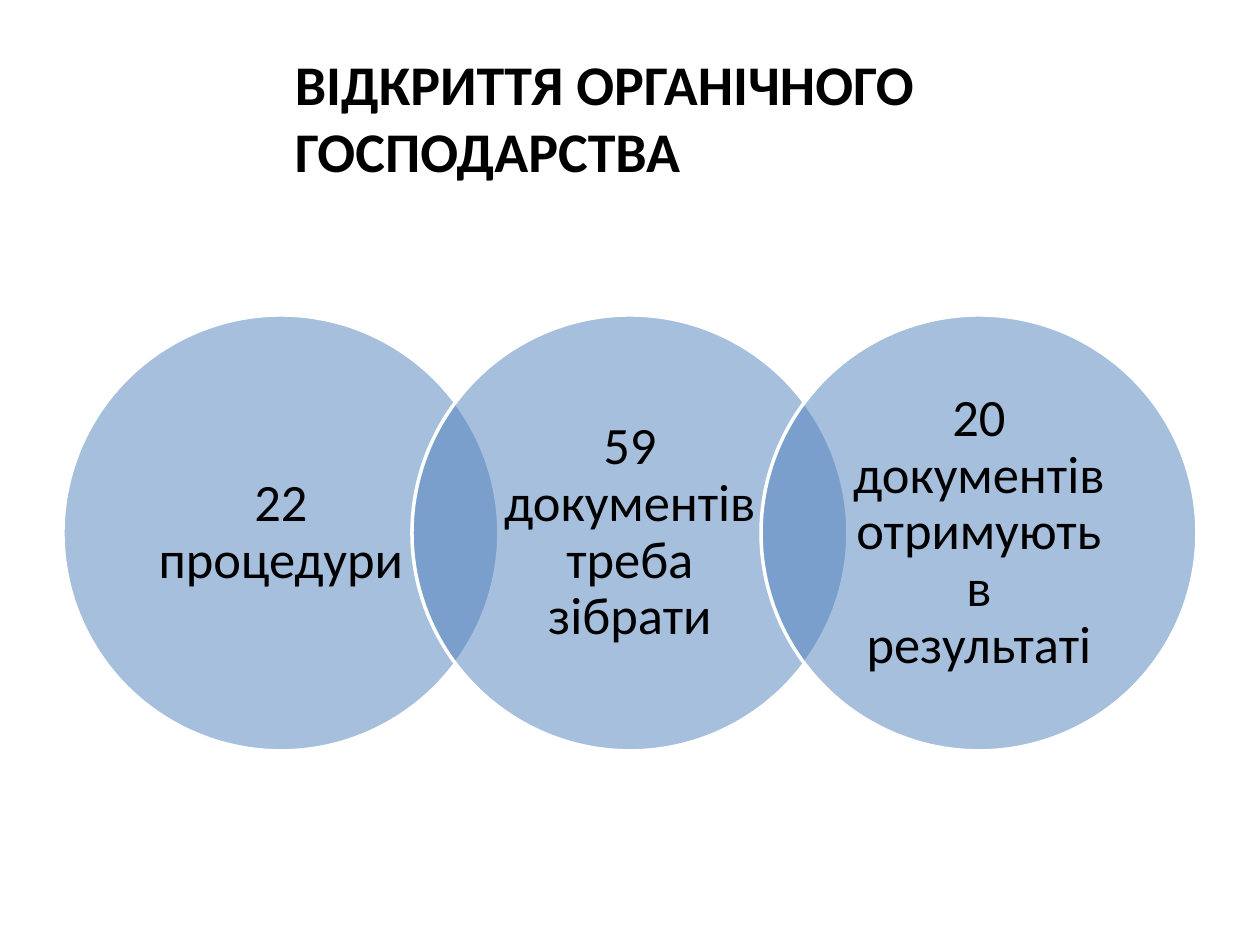
from pptx import Presentation
from pptx.dml.color import RGBColor
from pptx.enum.shapes import MSO_SHAPE as Shape
from pptx.enum.text import MSO_ANCHOR as Anchor, PP_ALIGN as Align
from pptx.oxml.ns import qn
from pptx.util import Inches, Pt
from lxml import etree


def rgb(value):
    return RGBColor.from_string(value)


def style_font(font, size, bold):
    font.name = "Calibri"
    font.size = Pt(size)
    font.bold = bold
    font.color.rgb = rgb("000000")


presentation = Presentation()
presentation.slide_width = Inches(10)
presentation.slide_height = Inches(7.5)
slide = presentation.slides.add_slide(presentation.slide_layouts[5])

title = slide.shapes.title
title.left, title.top = Inches(2.24), Inches(0.3)
title.width, title.height = Inches(7.26), Inches(1.25)
title.text_frame.text = "ВІДКРИТТЯ ОРГАНІЧНОГО ГОСПОДАРСТВА"
title.text_frame.vertical_anchor = Anchor.MIDDLE
heading = title.text_frame.paragraphs[0]
heading.alignment = Align.LEFT
style_font(heading.runs[0].font, 32, True)

labels = [
    "22 процедури",
    "59 документів треба зібрати",
    "20 документів отримують в результаті",
]
diameter = 3.46
step = 2.77  # each circle overlaps its neighbour by a fifth

for index, label in enumerate(labels):
    circle = slide.shapes.add_shape(
        Shape.OVAL, Inches(0.5 + index * step), Inches(2.5),
        Inches(diameter), Inches(diameter))
    circle.shadow.inherit = False
    circle.fill.solid()
    circle.fill.fore_color.rgb = rgb("4F81BD")
    fill_color = circle.fill._xPr.find(qn("a:solidFill")).find(qn("a:srgbClr"))
    etree.SubElement(fill_color, qn("a:alpha"), val="50000")
    circle.line.color.rgb = rgb("FFFFFF")
    circle.line.width = Pt(2)

    text_frame = circle.text_frame
    text_frame.text = label
    text_frame.word_wrap = True
    text_frame.vertical_anchor = Anchor.MIDDLE
    text_frame.margin_left = text_frame.margin_right = Inches(0.19)
    text_frame.margin_top = text_frame.margin_bottom = Inches(0.04)
    paragraph = text_frame.paragraphs[0]
    paragraph.alignment = Align.CENTER
    paragraph.line_spacing = 0.9
    style_font(paragraph.runs[0].font, 30, False)

presentation.save("out.pptx")
